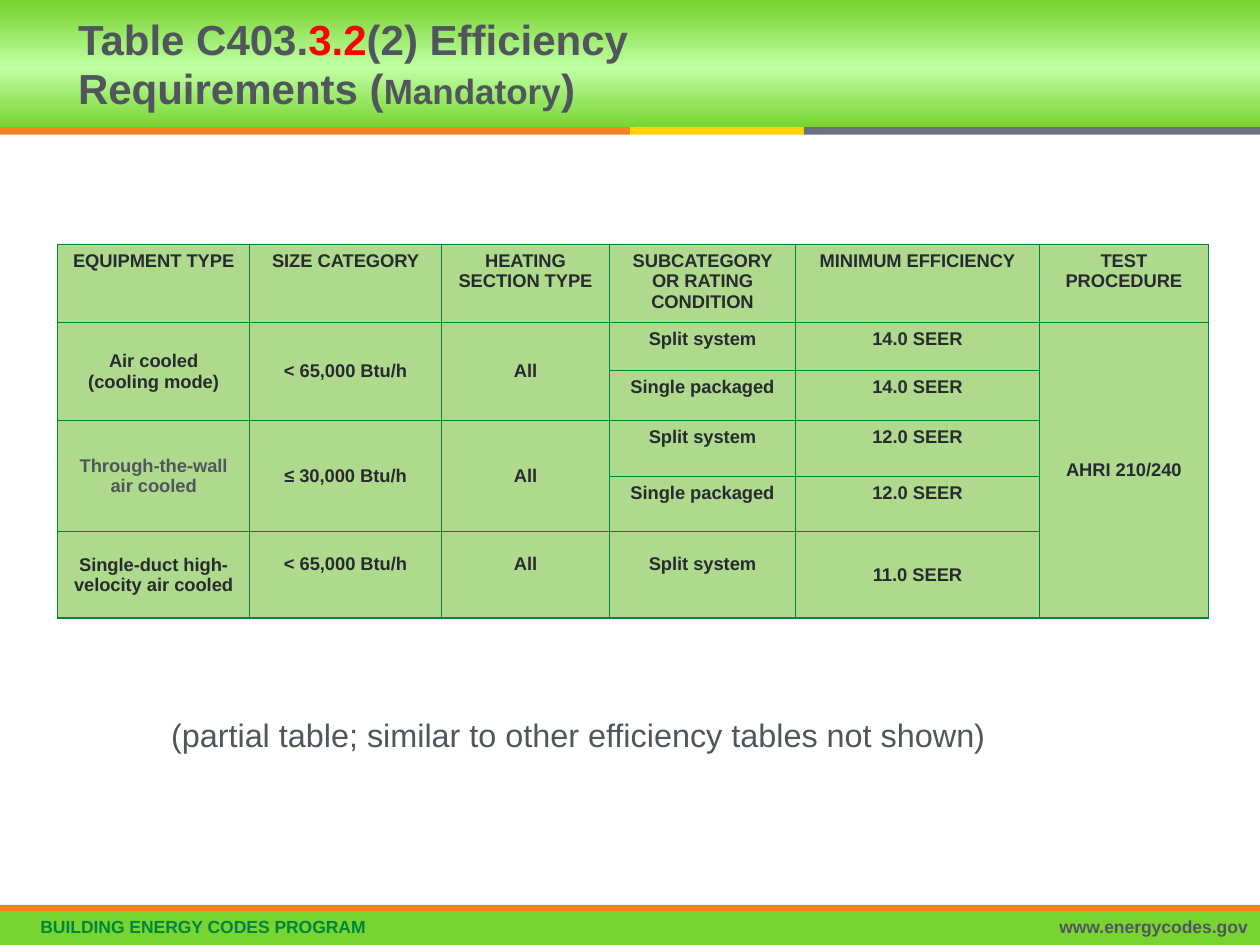
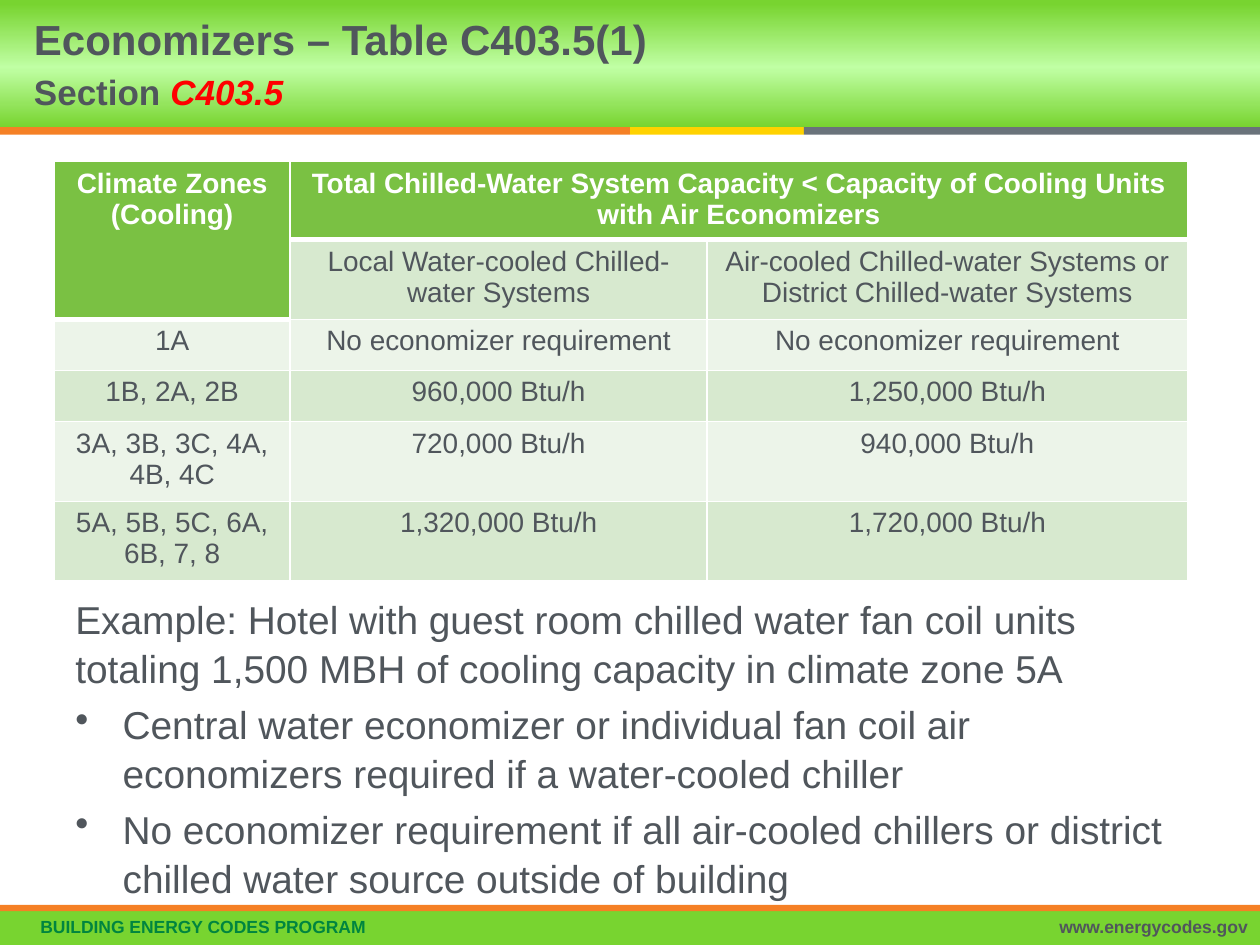
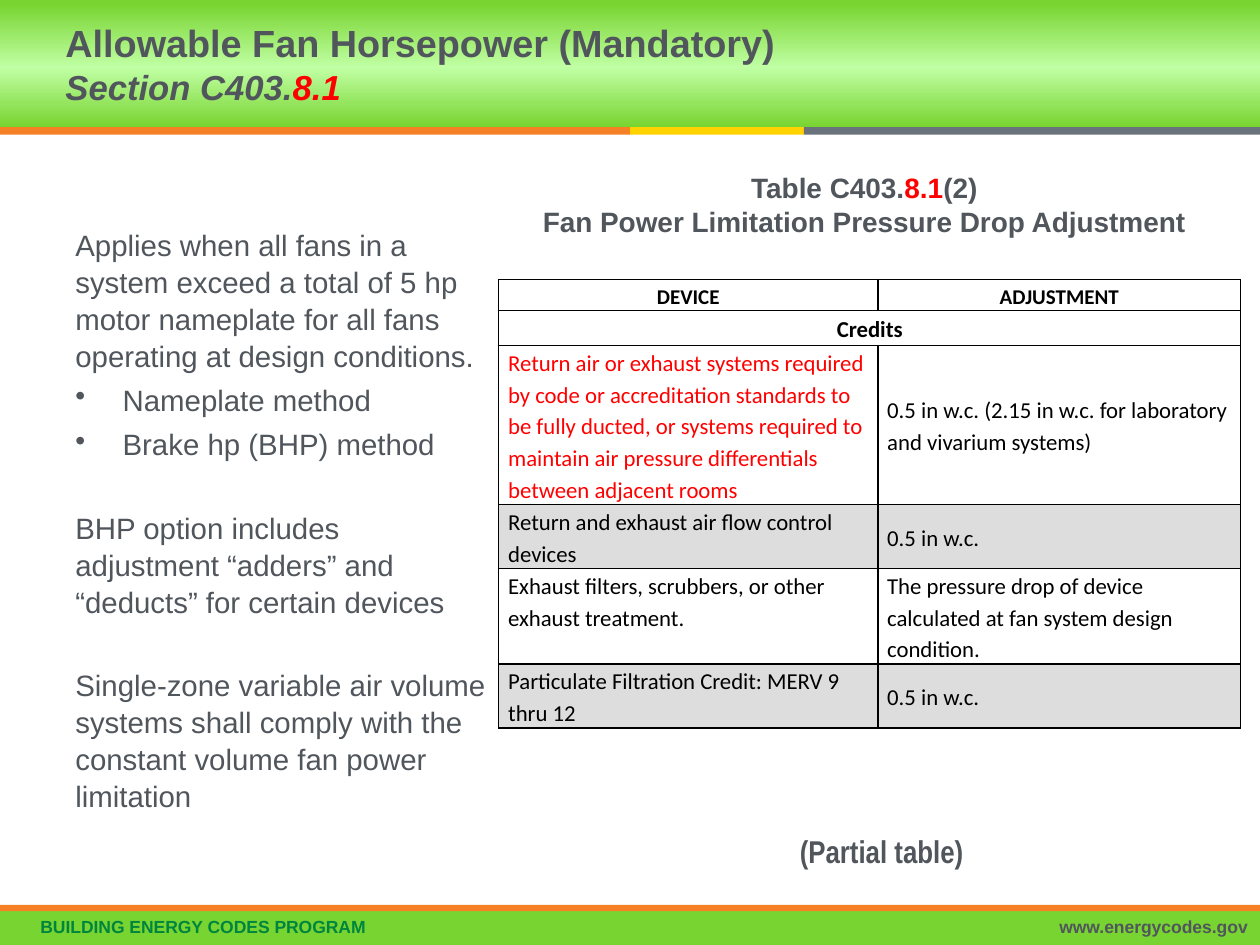
from copy import deepcopy

from lxml import etree
from pptx import Presentation
from pptx.dml.color import RGBColor
from pptx.enum import shapes, text
from pptx.oxml import ns
from pptx.util import Pt

# Shared look
GREY, RED, DARK, WHITE, BLACK = "50565C", "FF0000", "282B2E", "FFFFFF", "000000"
GREEN, LIME, ORANGE = "00853F", "78D430", "F58025"
TITLE_HEIGHT = 72.7
GLOW = [(0, LIME), (0.47, "C0FFA4"), (0.97, LIME)]
BANDS = [  # left, top, width, height, colour
    (0, TITLE_HEIGHT, 360, 4.3, ORANGE),
    (360, TITLE_HEIGHT, 99.4, 4.3, "FFD200"),
    (459.4, TITLE_HEIGHT, 260.6, 4.3, "6A737B"),
    (0, 520.6, 720, 19.4, LIME),
    (0, 517, 720, 3.6, ORANGE),
]
FOOTERS = [  # text, left, width, colour, alignment
    ("BUILDING ENERGY CODES PROGRAM", 16, 574, GREEN, "l"),
    ("www.energycodes.gov", 431.3, 288.7, GREY, "r"),
]
ALIGN = {"l": text.PP_ALIGN.LEFT, "c": text.PP_ALIGN.CENTER, "r": text.PP_ALIGN.RIGHT}
MIDDLE, TOP = text.MSO_ANCHOR.MIDDLE, text.MSO_ANCHOR.TOP

# A paragraph is a list of spans: plain text, or (text, changes to the style)
HEADS = dict(size=24, bold=True, spacing=Pt(28))
RED_SPAN = dict(color=RED)

EFFICIENCY = dict(
    title=["Table C403.", ("3.2", RED_SPAN), "(2) Efficiency Requirements (",
           ("Mandatory", dict(size=20)), ")"],
    title_box=(37.4, 422.6), title_style=HEADS,
    table=dict(
        place=(33, 139.8),
        columns=[109.7, 109.7, 96, 106.3, 139.4, 96.5],
        heights=[44.5, 27.5, 28.5, 32, 31.5, 49.5],
        style=dict(size=10.5, bold=True, color=DARK, align="c"),
        border=GREEN,
        fills=["AFDA8E"] * 6,
        merges=[(1, 0, 2, 0), (1, 1, 2, 1), (1, 2, 2, 2), (1, 5, 5, 5),
                (3, 0, 4, 0), (3, 1, 4, 1), (3, 2, 4, 2)],
        top_cells=[(0, c) for c in range(6)] + [(r, c) for r in range(1, 5) for c in (3, 4)],
        raised=[(5, 1), (5, 2), (5, 3)],
        rows=[
            ["EQUIPMENT TYPE", "SIZE CATEGORY", "HEATING SECTION TYPE",
             "SUBCATEGORY OR RATING CONDITION", "MINIMUM EFFICIENCY", "TEST PROCEDURE"],
            [["Air cooled", "\n", "(cooling mode)"], "< 65,000 Btu/h", "All",
             "Split system", "14.0 SEER", "AHRI 210/240"],
            [None, None, None, "Single packaged", "14.0 SEER", None],
            [("Through-the-wall air cooled", dict(color=GREY)), "≤ 30,000 Btu/h", "All",
             "Split system", "12.0 SEER", None],
            [None, None, None, "Single packaged", "12.0 SEER", None],
            ["Single-duct high-velocity air cooled", "< 65,000 Btu/h", "All",
             "Split system", "11.0 SEER", None],
        ]),
    boxes=[((90.7, 404, 499.7, 47.5), dict(size=18.5, spacing=1.05),
            [["(partial table; similar to other efficiency tables not shown)"]])],
)

ECONOMIZERS = dict(
    title=["Economizers – Table C403.5(1)", "\n", ("Section ", dict(size=20)),
           ("C403.5", dict(size=20, color=RED, italic=True))],
    title_box=(12.2, 447.8), title_style=HEADS,
    table=dict(
        place=(31, 92.4),
        columns=[134.8, 238.3, 274.6],
        heights=[44.5, 45.6, 29.2, 29.2, 45.6, 45.6],
        style=dict(size=16, align="c"),
        border=WHITE,
        fills=["7AC143", "D7E9CF", "ECF4E9", "D7E9CF", "ECF4E9", "D7E9CF"],
        merges=[(0, 0, 1, 0), (0, 1, 0, 2)],
        top_cells=[(r, c) for r in range(6) for c in range(3)],
        thick_below=[(0, 0), (1, 0), (0, 1), (0, 2)],
        head_style=dict(color=WHITE, bold=True),
        rows=[
            [["Climate Zones", "\n", "(Cooling)"],
             "Total Chilled-Water System Capacity < Capacity of Cooling Units "
             "with Air Economizers", None],
            [None, "Local Water-cooled Chilled-water Systems",
             "Air-cooled Chilled-water Systems or District Chilled-water Systems"],
            ["1A", "No economizer requirement", "No economizer requirement"],
            ["1B, 2A, 2B", "960,000 Btu/h", "1,250,000 Btu/h"],
            ["3A, 3B, 3C, 4A, 4B, 4C", "720,000 Btu/h", "940,000 Btu/h"],
            ["5A, 5B, 5C, 6A, 6B, 7, 8", "1,320,000 Btu/h", "1,720,000 Btu/h"],
        ]),
    boxes=[((36, 335.5, 648, 168.5), dict(size=22.2, spacing=1.05, before=4), [
        ["Example: Hotel with guest room chilled water fan coil units totaling 1,500 MBH "
         "of cooling capacity in climate zone 5A"],
        ["•", "Central water economizer or individual fan coil air economizers required "
         "if a water-cooled chiller"],
        ["•", "No economizer requirement if all air-cooled chillers or district chilled "
         "water source outside of building"],
    ])],
)

SMALLER = dict(size=19.8, italic=True)
FAN_POWER = dict(
    title=["Allowable Fan Horsepower (Mandatory)", "\n", ("Section C403.", SMALLER),
           ("8.1", dict(SMALLER, color=RED))],
    title_box=(30.2, 430), title_style=dict(size=21.6, bold=True),
    table=dict(
        place=(285, 159.8),
        columns=[216.6, 207.4],
        heights=[17.6, 20, 91, 36.5, 54.4, 36.5],
        style=dict(size=13, name="Calibri", color=BLACK, spacing=1.15),
        border=BLACK,
        fills=[None, None, None, "DDDDDD", None, "DDDDDD"],
        merges=[(1, 0, 1, 1)],
        top_cells=[(4, 0), (4, 1)],
        margins=(5.4, 0),
        head_style=dict(size=12, bold=True, align="c"),
        rows=[
            ["DEVICE", "ADJUSTMENT"],
            [("Credits", dict(bold=True, align="c")), None],
            [("Return air or exhaust systems required by code or accreditation standards to "
              "be fully ducted, or systems required to maintain air pressure differentials "
              "between adjacent rooms", RED_SPAN),
             "0.5 in w.c. (2.15 in w.c. for laboratory and vivarium systems)"],
            ["Return and exhaust air flow control devices", "0.5 in w.c."],
            ["Exhaust filters, scrubbers, or other exhaust treatment.",
             "The pressure drop of device calculated at fan system design condition."],
            ["Particulate Filtration Credit: MERV 9 thru 12", "0.5 in w.c."],
        ]),
    boxes=[
        ((36, 125.3, 249.1, 340), dict(size=16.8, spacing=1.05, before=4), [
            ["Applies when all fans in a system exceed a total of 5 hp motor nameplate "
             "for all fans operating at design conditions."],
            ["•", "Nameplate method"],
            ["•", "Brake hp (BHP) method"],
            [("BHP option includes adjustment “adders” and “deducts” for certain devices",
              dict(before=26.5))],
            [("Single-zone variable air volume systems shall comply with the constant "
              "volume fan power limitation", dict(before=26.5))],
        ]),
        ((450, 476, 211, 24.5), dict(size=18, name="Arial Narrow", bold=True, spacing=0.8),
         [["(Partial table)"]]),
        ((298.8, 94, 390.2, 46), dict(size=16, bold=True, align="c"),
         [["Table C403.", ("8.1", RED_SPAN), "(2)", "\n",
           "Fan Power Limitation Pressure Drop Adjustment"]]),
    ],
)


def rgb(value):
    return RGBColor.from_string(value)


def set_font(font, style):
    font.name = style.get("name", "Arial")
    font.size = Pt(style["size"])
    font.bold = style.get("bold", False)
    font.italic = style.get("italic", False)
    font.color.rgb = rgb(style.get("color", GREY))


def fill_para(para, spans, style, first=True):
    """Write spans into a paragraph; a leading bullet sign makes it a list item."""
    if spans[0] == "•":
        spans = spans[1:]
        props = para._p.get_or_add_pPr()
        props.set("marL", str(Pt(27)))
        props.set("indent", str(-Pt(27)))
        etree.SubElement(props, ns.qn("a:buChar")).set("char", "•")
    spans = [span if isinstance(span, tuple) else (span, {}) for span in spans]
    whole = {**style, **spans[0][1]} if len(spans) == 1 else style
    para.alignment = ALIGN[whole.get("align", "l")]
    para.line_spacing = whole.get("spacing", 1.0)
    para.space_before = Pt(0 if first else whole.get("before", 0))
    if len(spans) == 1:
        para.add_run().text = spans[0][0]
        set_font(para.font, whole)
        return
    for words, changes in spans:
        if words == "\n":
            para.add_line_break()
            para._p[-1].insert(0, deepcopy(run._r.rPr))
        else:
            run = para.add_run()
            run.text = words
            set_font(run.font, {**style, **changes})


def add_text(page, place, style, paras):
    box = page.shapes.add_textbox(*map(Pt, place))
    frame = box.text_frame
    frame.word_wrap = True
    for index, spans in enumerate(paras):
        para = frame.add_paragraph() if index else frame.paragraphs[0]
        fill_para(para, spans, style, first=index == 0)
    return box


def add_band(page, place, color=None):
    """A borderless rectangle, glowing when no colour is given."""
    band = page.shapes.add_shape(shapes.MSO_SHAPE.RECTANGLE, *map(Pt, place))
    band.shadow.inherit = False
    band.line.fill.background()
    if color:
        band.fill.solid()
        band.fill.fore_color.rgb = rgb(color)
        return band
    band.fill.gradient()
    band.fill.gradient_angle = 90
    stop_list = band._element.spPr.find(".//" + ns.qn("a:gsLst"))
    stop_list.append(deepcopy(stop_list[0]))
    for stop, (position, shade) in zip(band.fill.gradient_stops, GLOW):
        stop.position = position
        stop.color.rgb = rgb(shade)
    return band


def furnish_layout(layout, page):
    """Draw the bands and footers once and move them to the layout."""
    parts = [add_band(page, (0, 0, 720, TITLE_HEIGHT))]
    parts += [add_band(page, place, color) for *place, color in BANDS]
    for words, left, width, color, align in FOOTERS:
        style = dict(size=10, bold=True, color=color, align=align, spacing=0.9)
        parts.append(add_text(page, (left, 521.3, width, 18.7), style, [[words]]))
    for part in parts:
        layout.shapes._spTree.append(part._element)


def set_borders(cell, color, widths):
    props = cell._tc.get_or_add_tcPr()
    for index, (side, width) in enumerate(zip("LRTB", widths)):
        line = etree.Element(ns.qn("a:ln" + side), w=str(Pt(width)))
        solid = etree.SubElement(line, ns.qn("a:solidFill"))
        etree.SubElement(solid, ns.qn("a:srgbClr")).set("val", color)
        props.insert(index, line)


def add_grid(page, data):
    rows, columns, heights = data["rows"], data["columns"], data["heights"]
    frame = page.shapes.add_table(len(rows), len(columns), *map(Pt, data["place"]),
                                  Pt(sum(columns)), Pt(sum(heights)))
    table = frame.table
    table.first_row = table.horz_banding = False
    for column, width in zip(table.columns, columns):
        column.width = Pt(width)
    for row, height in zip(table.rows, heights):
        row.height = Pt(height)
    for top, left, bottom, right in data["merges"]:
        table.cell(top, left).merge(table.cell(bottom, right))
    thick = data.get("thick_below", [])
    side, edge = data.get("margins", (7.2, 3.6))
    for r, row in enumerate(rows):
        style = {**data["style"], **(data.get("head_style", {}) if r == 0 else {})}
        for c, content in enumerate(row):
            cell = table.cell(r, c)
            cell.margin_left = cell.margin_right = Pt(side)
            cell.margin_top = Pt(edge)
            cell.margin_bottom = Pt(edge + (12 if (r, c) in data.get("raised", []) else 0))
            cell.vertical_anchor = TOP if (r, c) in data["top_cells"] else MIDDLE
            if data["fills"][r]:
                cell.fill.solid()
                cell.fill.fore_color.rgb = rgb(data["fills"][r])
            else:
                cell.fill.background()
            set_borders(cell, data["border"],
                        (1, 1, 3 if (r - 1, c) in thick else 1, 3 if (r, c) in thick else 1))
            if content:
                spans = content if isinstance(content, list) else [content]
                fill_para(cell.text_frame.paragraphs[0], spans, style)


def set_title(page, data):
    title = page.shapes.title
    left, width = data["title_box"]
    title.left, title.top, title.width, title.height = map(Pt, (left, 0, width, TITLE_HEIGHT))
    frame = title.text_frame
    frame.word_wrap = True
    frame.auto_size = text.MSO_AUTO_SIZE.NONE
    frame.vertical_anchor = MIDDLE
    fill_para(frame.paragraphs[0], data["title"], data["title_style"])


def main():
    deck = Presentation()
    deck.slide_width, deck.slide_height = Pt(720), Pt(540)
    layout = deck.slide_layouts[5]
    for number, data in enumerate([EFFICIENCY, ECONOMIZERS, FAN_POWER]):
        page = deck.slides.add_slide(layout)
        if number == 0:
            furnish_layout(layout, page)
        set_title(page, data)
        add_grid(page, data["table"])
        for place, style, paras in data["boxes"]:
            add_text(page, place, style, paras)
    deck.save("out.pptx")


if __name__ == "__main__":
    main()
